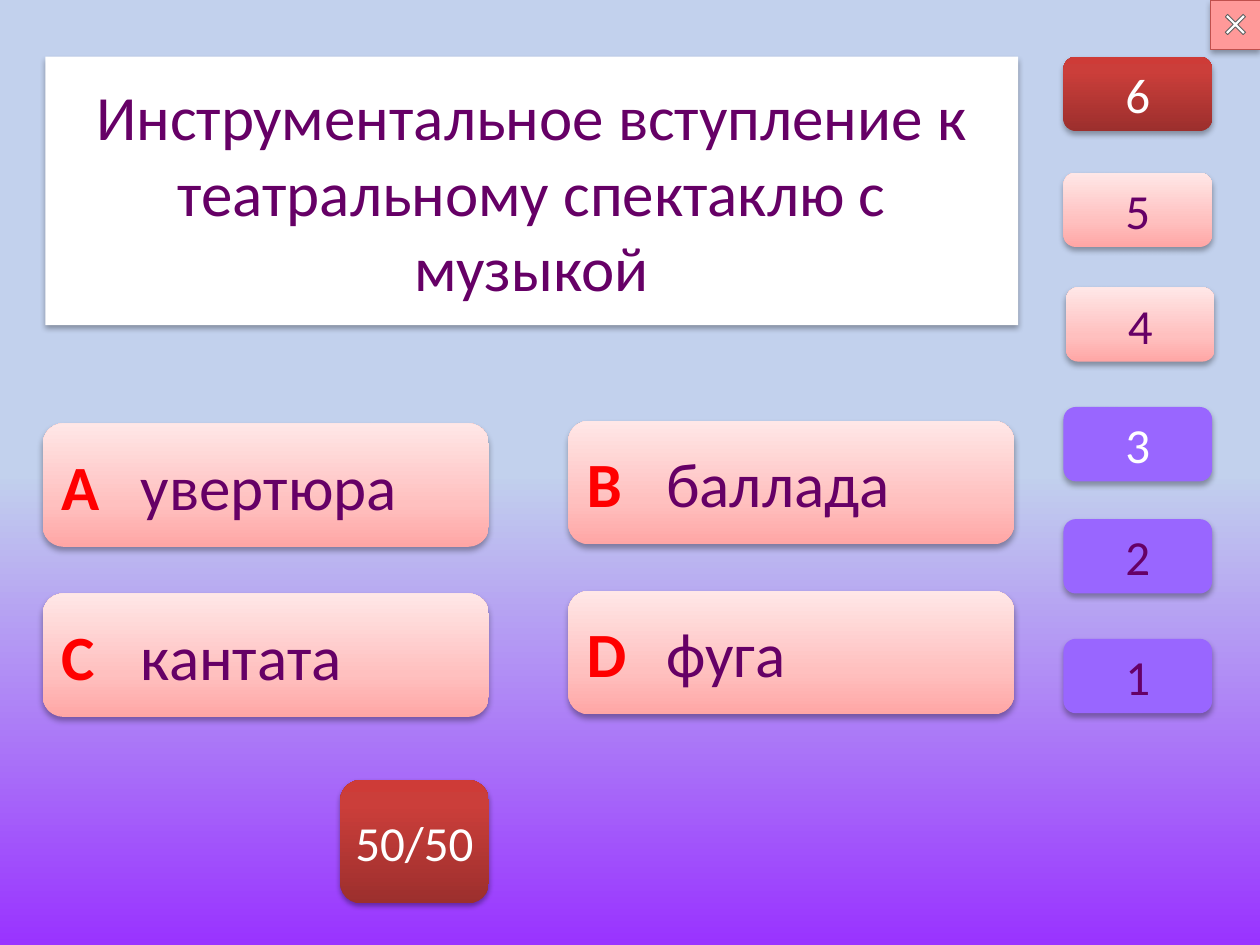
"""Build a quiz slide with a question, four answers and a score ladder."""
import pptx
import pptx.util
import pptx.dml.color
import pptx.enum.shapes
import pptx.enum.text
import pptx.oxml
import pptx.oxml.ns
from lxml import etree

Pt = pptx.util.Pt
SHAPE = pptx.enum.shapes.MSO_SHAPE
ALIGN = pptx.enum.text.PP_ALIGN
qn = pptx.oxml.ns.qn

QUESTION = "Инструментальное вступление к театральному спектаклю с музыкой"
ANSWERS = [("А", "увертюра"), ("В", "баллада"), ("C", "кантата"), ("D", "фуга")]
HELP = "50/50"
LADDER = [
    ("6", 607.68, 32.4, "red", "white"),
    ("5", 607.68, 98.64, "pink", "plum"),
    ("4", 609.12, 164.16, "pink", "plum"),
    ("3", 607.68, 232.56, "violet", "white"),
    ("2", 607.68, 296.64, "violet", "plum"),
    ("1", 607.68, 365.04, "violet", "plum"),
]
COLORS = {
    "white": "FFFFFF", "plum": "660066", "letter": "FF0000", "violet": "9966FF",
    "rose": "FF9999", "brick": "C0504D", "gray": "5F5F5F", "black": "000000",
}
BLENDS = {
    "sky": [(0, "9933FF"), (50, "C2D1ED")],
    "pink": [(0, "FFA6A5"), (35, "FFC0BF"), (100, "FFE7E7")],
    "red": [(0, "9C2F2D"), (80, "CB3E3A"), (100, "CE3B37")],
}
SOFT = {"alpha": 32, "blur": 3.5, "dist": 2.2}
TIGHT = {"alpha": 35, "blur": 3.1, "dist": 1.8}
CLOSE = (691.92, 0, 28.08, 28.08)
TILE = (84.96, 42.48)
CARD = (254.88, 70.56)


def rgb(name):
    return pptx.dml.color.RGBColor.from_string(COLORS[name])


def child(parent, tag, **attrs):
    node = etree.SubElement(parent, qn(tag))
    for key, value in attrs.items():
        node.set(key, str(value))
    return node


def paint(fill, root, name):
    if name is None:
        fill.background()
    elif name in BLENDS:
        fill.gradient()
        fill.gradient_angle = 90
        stops = next(root.iter(qn("a:gsLst")))
        for stop in list(stops):
            stops.remove(stop)
        for place, color in BLENDS[name]:
            stop = child(stops, "a:gs", pos=place * 1000)
            child(stop, "a:srgbClr", val=color)
    else:
        fill.solid()
        fill.fore_color.rgb = rgb(name)


def style(shape, fill, line=None, shade=None):
    paint(shape.fill, shape.element.spPr, fill)
    if line:
        shape.line.color.rgb = rgb(line)
        shape.line.width = Pt(0.5)
    else:
        shape.line.fill.background()
    shape.shadow.inherit = False
    if shade:
        glow = child(
            shape.element.spPr.find(qn("a:effectLst")), "a:outerShdw",
            blurRad=int(Pt(shade["blur"])), dist=int(Pt(shade["dist"])),
            dir=5400000, rotWithShape=0)
        color = child(glow, "a:srgbClr", val=COLORS["black"])
        child(color, "a:alpha", val=shade["alpha"] * 1000)


def add(slide, kind, box, fill, line=None, shade=None):
    shape = slide.shapes.add_shape(kind, *map(Pt, box))
    style(shape, fill, line, shade)
    return shape


def write(shape, runs, size, align, wrap, tab=None):
    frame = shape.text_frame
    look = {
        "word_wrap": wrap,
        "auto_size": pptx.enum.text.MSO_AUTO_SIZE.NONE,
        "vertical_anchor": pptx.enum.text.MSO_ANCHOR.MIDDLE,
    }
    for key, value in look.items():
        setattr(frame, key, value)
    para = frame.paragraphs[0]
    para.alignment = align
    if tab:
        tabs = child(para._p.get_or_add_pPr(), "a:tabLst")
        child(tabs, "a:tab", pos=int(Pt(tab)), algn="l")
    for text, color, bold in runs:
        run = para.add_run()
        run.text = text
        for key, value in {"name": "Calibri", "size": Pt(size), "bold": bold}.items():
            setattr(run.font, key, value)
        run.font.color.rgb = rgb(color)


def main():
    deck = pptx.Presentation()
    deck.slide_width, deck.slide_height = Pt(720), Pt(540)
    slide = deck.slides.add_slide(deck.slide_layouts[5])
    paint(slide.background.fill, slide.element, "sky")

    title = slide.shapes.title
    place = {"left": 25.92, "top": 32.4, "width": 555.84, "height": 153.36}
    for key, value in place.items():
        setattr(title, key, Pt(value))
    child(child(title.element.spPr, "a:prstGeom", prst="roundRect"), "a:avLst")
    style(title, "white", shade=SOFT)
    write(title, [(QUESTION, "plum", False)], 36, ALIGN.CENTER, True)

    add(slide, SHAPE.ACTION_BUTTON_CUSTOM, CLOSE, "rose", shade=SOFT)
    cross = add(slide, SHAPE.CROSS, (698.76, 6.84, 14.4, 14.4), "white", "gray")
    cross.adjustments[0] = 0.435
    cross.rotation = 45
    add(slide, SHAPE.ACTION_BUTTON_CUSTOM, CLOSE, None, "brick")

    for index, (letter, word) in enumerate(ANSWERS):
        row, col = divmod(index, 2)
        spot = (24.48 + 300.24 * col, 241.92 + 97.2 * row - 1.44 * col)
        card = add(slide, SHAPE.ROUNDED_RECTANGLE, spot + CARD, "pink", shade=SOFT)
        runs = [(letter + "\t", "letter", True), (word, "plum", False)]
        write(card, runs, 36, ALIGN.LEFT, True, 45.5)

    box = (194.4, 445.68, TILE[0], CARD[1])
    half = add(slide, SHAPE.ROUNDED_RECTANGLE, box, "red", shade=TIGHT)
    write(half, [(HELP, "white", False)], 28, ALIGN.CENTER, False)

    for text, left, top, fill, color in LADDER:
        tile = add(slide, SHAPE.ROUNDED_RECTANGLE, (left, top) + TILE, fill, shade=SOFT)
        write(tile, [(text, color, False)], 28, ALIGN.CENTER, False)

    deck.save("out.pptx")


if __name__ == "__main__":
    main()
